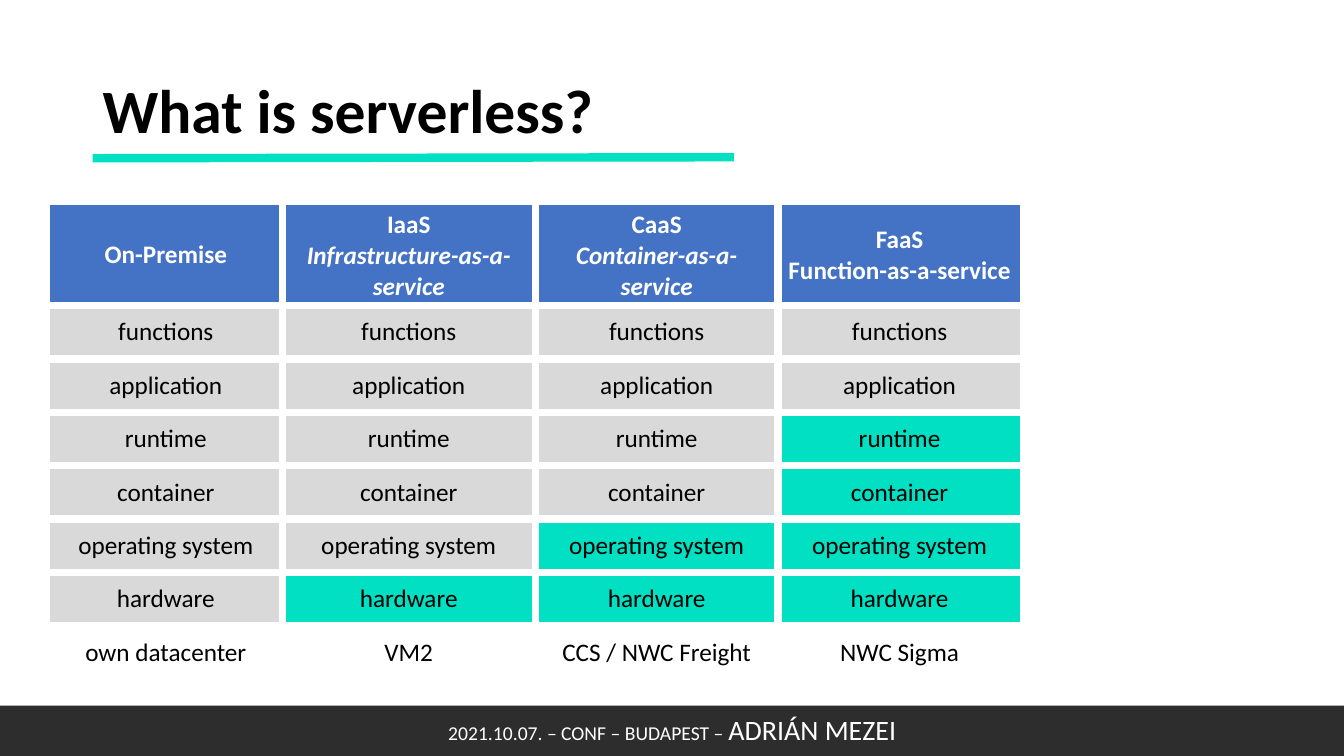
from dataclasses import dataclass

from lxml import etree
from pptx import Presentation
from pptx import util as u
from pptx.dml.color import RGBColor
from pptx.enum import shapes, text
from pptx.oxml import ns


@dataclass(frozen=True)
class Theme:
    font: str = "Calibri"
    white: str = "FFFFFF"
    black: str = "000000"
    footer: str = "2D2D2D"
    accent: str = "01E0C3"
    header: str = "4472C4"
    own: str = "D9D9D9"
    title_size: float = 44
    table_size: float = 18
    footer_size: float = 14
    speaker_size: float = 20


@dataclass(frozen=True)
class Frame:
    left: float
    top: float
    width: float
    height: float

    def lengths(self) -> list[u.Length]:
        return [u.Pt(value) for value in (self.left, self.top, self.width, self.height)]


@dataclass(frozen=True)
class ServiceModel:
    name: str
    meaning: str
    italic: bool
    managed_layers: int
    example: str
    width: float


THEME = Theme()
PAGE = Frame(0, 0, 960, 540)
FOOTER = Frame(0, 504, 960, 36)
FOOTER_TEXT = Frame(273.6, 505.44, 413.28, 31.68)
TITLE = Frame(66.24, 28.8, 828, 104.4)
TABLE_LEFT, TABLE_TOP = 35.28, 146.16
HEADER_HEIGHT, LAYER_HEIGHT = 65.52, 38.16
INNER_BORDER, OUTER_BORDER = 6, 1
LAYERS = ["functions", "application", "runtime", "container", "operating system", "hardware"]
MODELS = [
    ServiceModel("On-Premise", "", False, 0, "own datacenter", 166.32),
    ServiceModel("IaaS", "Infrastructure-as-a-service", True, 1, "VM2", 180.72),
    ServiceModel("CaaS", "Container-as-a-service", True, 2, "CCS / NWC Freight", 173.52),
    ServiceModel("FaaS", "Function-as-a-service", False, 4, "NWC Sigma", 173.52),
]


def style(para, size: float | None, color: str, bold: bool = False, italic: bool = False) -> None:
    font = para.font
    font.name = THEME.font
    if size:
        font.size = u.Pt(size)
    font.bold = bold
    font.italic = italic
    font.color.rgb = RGBColor.from_string(color)


def add_box(page, frame: Frame):
    box = page.shapes.add_textbox(*frame.lengths())
    box.text_frame.word_wrap = True
    return box.text_frame


def add_footer(page) -> None:
    bar = page.shapes.add_shape(shapes.MSO_SHAPE.RECTANGLE, *FOOTER.lengths())
    bar.shadow.inherit = False
    bar.fill.solid()
    bar.fill.fore_color.rgb = RGBColor.from_string(THEME.footer)
    bar.line.fill.background()

    frame = add_box(page, FOOTER_TEXT)
    frame.auto_size = text.MSO_AUTO_SIZE.SHAPE_TO_FIT_TEXT
    para = frame.paragraphs[0]
    para.alignment = text.PP_ALIGN.CENTER
    style(para, None, THEME.white)
    for words, size in [
        ("2021.10.07. – CONF – BUDAPEST – ", THEME.footer_size),
        ("ADRIÁN MEZEI", THEME.speaker_size),
    ]:
        span = para.add_run()
        span.text = words
        span.font.size = u.Pt(size)


def add_title(page) -> None:
    frame = add_box(page, TITLE)
    frame.vertical_anchor = text.MSO_ANCHOR.MIDDLE
    para = frame.paragraphs[0]
    para.text = "What is serverless?"
    para.line_spacing = 0.9
    style(para, THEME.title_size, THEME.black, bold=True)

    underline = page.shapes.add_connector(
        shapes.MSO_CONNECTOR.STRAIGHT, u.Pt(66.24), u.Pt(113.04), u.Pt(524.16), u.Pt(112.32)
    )
    underline.line.width = u.Pt(6)
    underline.line.color.rgb = RGBColor.from_string(THEME.accent)
    etree.SubElement(underline.element.spPr, ns.qn("a:effectLst"))


def set_borders(cell, outer: dict[str, bool]) -> None:
    properties = cell._tc.get_or_add_tcPr()
    for position, (side, is_outer) in enumerate(outer.items()):
        width = OUTER_BORDER if is_outer else INNER_BORDER
        line = etree.Element(ns.qn(f"a:ln{side}"), w=str(u.Pt(width)))
        fill = etree.SubElement(line, ns.qn("a:solidFill"))
        etree.SubElement(fill, ns.qn("a:srgbClr"), val=THEME.white)
        properties.insert(position, line)


def fill_cell(cell, lines: list[str], fill: str | None, color: str,
              bold: bool = False, italic_meaning: bool = False) -> None:
    cell.vertical_anchor = text.MSO_ANCHOR.MIDDLE
    if fill:
        cell.fill.solid()
        cell.fill.fore_color.rgb = RGBColor.from_string(fill)
    else:
        cell.fill.background()
    cell.text = "\n".join(lines)
    for index, para in enumerate(cell.text_frame.paragraphs):
        para.alignment = text.PP_ALIGN.CENTER
        style(para, THEME.table_size, color, bold, italic_meaning and index > 0)


def add_models_table(page) -> None:
    heights = [HEADER_HEIGHT] + [LAYER_HEIGHT] * (len(LAYERS) + 1)
    frame = Frame(TABLE_LEFT, TABLE_TOP, sum(model.width for model in MODELS), sum(heights))
    table = page.shapes.add_table(len(heights), len(MODELS), *frame.lengths()).table
    table.first_row = False
    table.horz_banding = False
    for row, height in zip(table.rows, heights):
        row.height = u.Pt(height)

    last_row, last_column = len(heights) - 1, len(MODELS) - 1
    for column, model in enumerate(MODELS):
        table.columns[column].width = u.Pt(model.width)
        heading = [line for line in (model.name, model.meaning) if line]
        fill_cell(table.cell(0, column), heading, THEME.header, THEME.white, True, model.italic)
        first_managed = len(LAYERS) - model.managed_layers
        for index, layer in enumerate(LAYERS):
            fill = THEME.accent if index >= first_managed else THEME.own
            fill_cell(table.cell(index + 1, column), [layer], fill, THEME.black)
        fill_cell(table.cell(last_row, column), [model.example], None, THEME.black)
        for row in range(len(heights)):
            set_borders(table.cell(row, column), {
                "L": column == 0,
                "R": column == last_column,
                "T": row == 0,
                "B": row == last_row,
            })


def main() -> None:
    deck = Presentation()
    deck.slide_width, deck.slide_height = u.Pt(PAGE.width), u.Pt(PAGE.height)
    page = deck.slides.add_slide(deck.slide_layouts[6])
    add_footer(page)
    add_title(page)
    add_models_table(page)
    deck.save("out.pptx")


if __name__ == "__main__":
    main()
